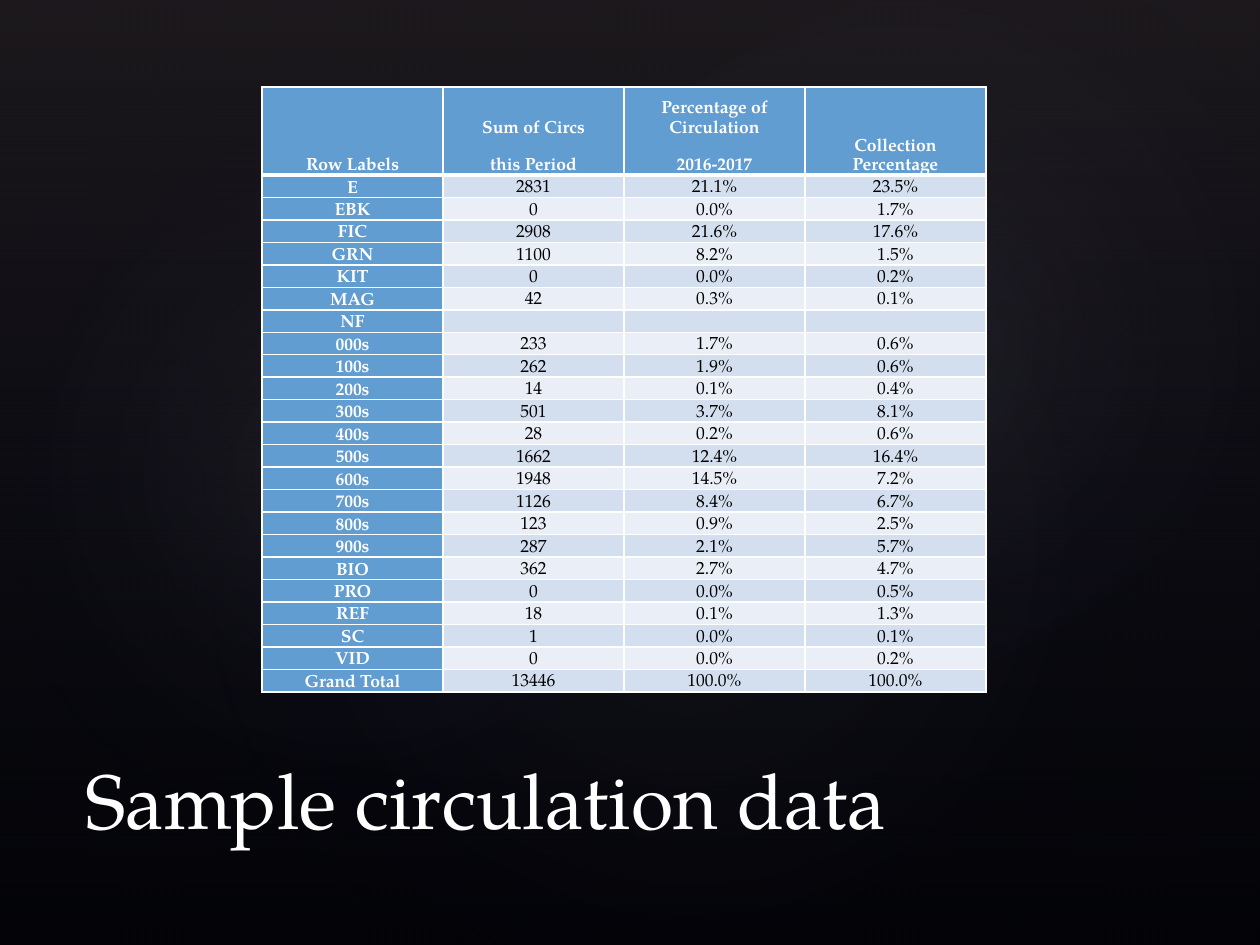
from lxml.etree import SubElement
from pptx import Presentation
from pptx.dml.color import RGBColor
from pptx.enum.shapes import MSO_SHAPE as Shape
from pptx.enum.text import MSO_ANCHOR as Anchor, PP_ALIGN as Align
from pptx.oxml import parse_xml
from pptx.oxml.ns import nsdecls, qn
from pptx.util import Pt

EMU_PER_PX = 914400 / 126
WHITE, BLACK, BLUE = "FFFFFF", "000000", "629DD1"
BANDS = ("D3DFEE", "EAEFF7")

HEADINGS = [
    ["Row Labels"],
    ["Sum of Circs", "this Period"],
    ["Percentage of Circulation", "2016-2017"],
    ["Collection Percentage"],
]
CIRCULATION = [
    ("E", "2831", "21.1%", "23.5%"),
    ("EBK", "0", "0.0%", "1.7%"),
    ("FIC", "2908", "21.6%", "17.6%"),
    ("GRN", "1100", "8.2%", "1.5%"),
    ("KIT", "0", "0.0%", "0.2%"),
    ("MAG", "42", "0.3%", "0.1%"),
    ("NF", "", "", ""),
    ("000s", "233", "1.7%", "0.6%"),
    ("100s", "262", "1.9%", "0.6%"),
    ("200s", "14", "0.1%", "0.4%"),
    ("300s", "501", "3.7%", "8.1%"),
    ("400s", "28", "0.2%", "0.6%"),
    ("500s", "1662", "12.4%", "16.4%"),
    ("600s", "1948", "14.5%", "7.2%"),
    ("700s", "1126", "8.4%", "6.7%"),
    ("800s", "123", "0.9%", "2.5%"),
    ("900s", "287", "2.1%", "5.7%"),
    ("BIO", "362", "2.7%", "4.7%"),
    ("PRO", "0", "0.0%", "0.5%"),
    ("REF", "18", "0.1%", "1.3%"),
    ("SC", "1", "0.0%", "0.1%"),
    ("VID", "0", "0.0%", "0.2%"),
    ("Grand Total", "13446", "100.0%", "100.0%"),
]
LINEAR_DOWN = '<a:lin ang="5400000" scaled="0"/>'
RADIAL = ('<a:path path="circle"><a:fillToRect l="50000" t="50000" '
          'r="50000" b="50000"/></a:path>')
GLOWS = [
    ((189, 144, 998, 786), 328.7, 7),
    ((-38, 161, 764, 617), 294.3, 8),
    ((451, 16, 893, 655), 328.7, 8),
]


def px(length):
    return round(length * EMU_PER_PX)


def color(hex_code):
    return RGBColor.from_string(hex_code)


class SlideBuilder:
    font_name = "TeX Gyre Pagella"

    def __init__(self, slide):
        self.slide = slide

    def background(self, hex_code):
        fill = self.slide.background.fill
        fill.solid()
        fill.fore_color.rgb = color(hex_code)

    def glow(self, kind, box, stops, direction, rotation=0):
        glow = self.slide.shapes.add_shape(kind, *map(px, box))
        glow.rotation = rotation
        glow.shadow.inherit = False
        glow.line.fill.background()
        glow.fill.background()
        gradient_stops = "".join(
            f'<a:gs pos="{position * 1000}"><a:srgbClr val="{hex_code}">'
            f'<a:alpha val="{opacity * 1000}"/></a:srgbClr></a:gs>'
            for position, hex_code, opacity in stops)
        gradient = parse_xml(
            f'<a:gradFill {nsdecls("a")} rotWithShape="1">'
            f'<a:gsLst>{gradient_stops}</a:gsLst>{direction}</a:gradFill>')
        properties = glow.element.spPr
        properties.replace(properties.find(qn("a:noFill")), gradient)

    def style(self, paragraph, size, hex_code, bold=False):
        font = paragraph.font
        font.name, font.size, font.bold = self.font_name, Pt(size), bold
        font.color.rgb = color(hex_code)

    def title(self, text, box):
        frame = self.slide.shapes.add_textbox(*map(px, box)).text_frame
        frame.word_wrap = True
        frame.vertical_anchor = Anchor.BOTTOM
        frame.text = text
        self.style(frame.paragraphs[0], 44, WHITE)

    def cell(self, cell, lines, fill, emphasized, top=1, bottom=1):
        cell.fill.solid()
        cell.fill.fore_color.rgb = color(fill)
        cell.vertical_anchor = Anchor.BOTTOM
        cell.margin_left = cell.margin_right = px(6)
        cell.margin_top = cell.margin_bottom = 0
        cell.text = "\n".join(lines)
        for paragraph in cell.text_frame.paragraphs:
            paragraph.alignment = Align.CENTER
            paragraph.line_spacing = 1.15
            paragraph.space_after = Pt(10)
            self.style(paragraph, 10, WHITE if emphasized else BLACK, emphasized)
            if not paragraph.text:
                SubElement(paragraph._p, qn("a:endParaRPr"), sz="1000")
        borders = (("L", 1), ("R", 1), ("T", top), ("B", bottom))
        for order, (side, width) in enumerate(borders):
            cell._tc.tcPr.insert(order, parse_xml(
                f'<a:ln{side} {nsdecls("a")} w="{Pt(width)}"><a:solidFill>'
                f'<a:srgbClr val="{WHITE}"/></a:solidFill></a:ln{side}>'))

    def table(self, headings, records, box, heading_height):
        left, top, width, height = map(px, box)
        table = self.slide.shapes.add_table(
            len(records) + 1, len(headings), left, top, width, height).table
        table.first_row = table.horz_banding = False
        for column in table.columns:
            column.width = width // len(headings)
        for row in table.rows:
            row.height = (height - px(heading_height)) // len(records)
        table.rows[0].height = px(heading_height)
        for column, lines in enumerate(headings):
            self.cell(table.cell(0, column), lines, BLUE, True, bottom=3)
        for row, record in enumerate(records, 1):
            band = BANDS[(row - 1) % 2]
            for column, value in enumerate(record):
                is_label = column == 0
                self.cell(table.cell(row, column), [value],
                          BLUE if is_label else band, is_label,
                          top=3 if row == 1 else 1)


def main():
    deck = Presentation()
    deck.slide_width, deck.slide_height = px(1260), px(945)
    builder = SlideBuilder(deck.slides.add_slide(deck.slide_layouts[6]))
    builder.background(BLACK)
    builder.glow(Shape.RECTANGLE, (0, 0, 1260, 945),
                 [(0, "504652", 36), (100, "242852", 10)], LINEAR_DOWN)
    for box, rotation, opacity in GLOWS:
        builder.glow(Shape.OVAL, box,
                     [(0, "C4BCC6", opacity), (58, "242852", 0)], RADIAL, rotation)
    builder.table(HEADINGS, CIRCULATION, (262, 87, 724, 605), 88)
    builder.title("Sample circulation data", (73, 725, 1040, 126))
    deck.save("out.pptx")


if __name__ == "__main__":
    main()
